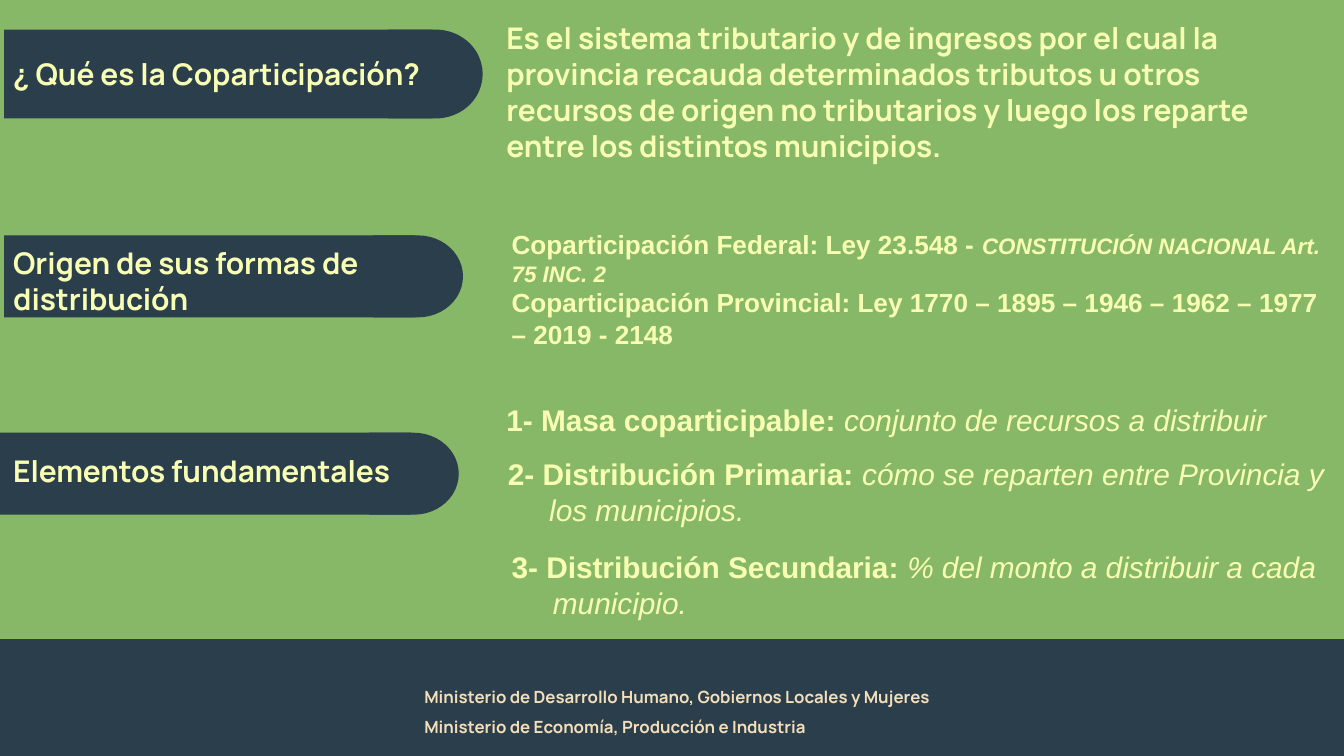
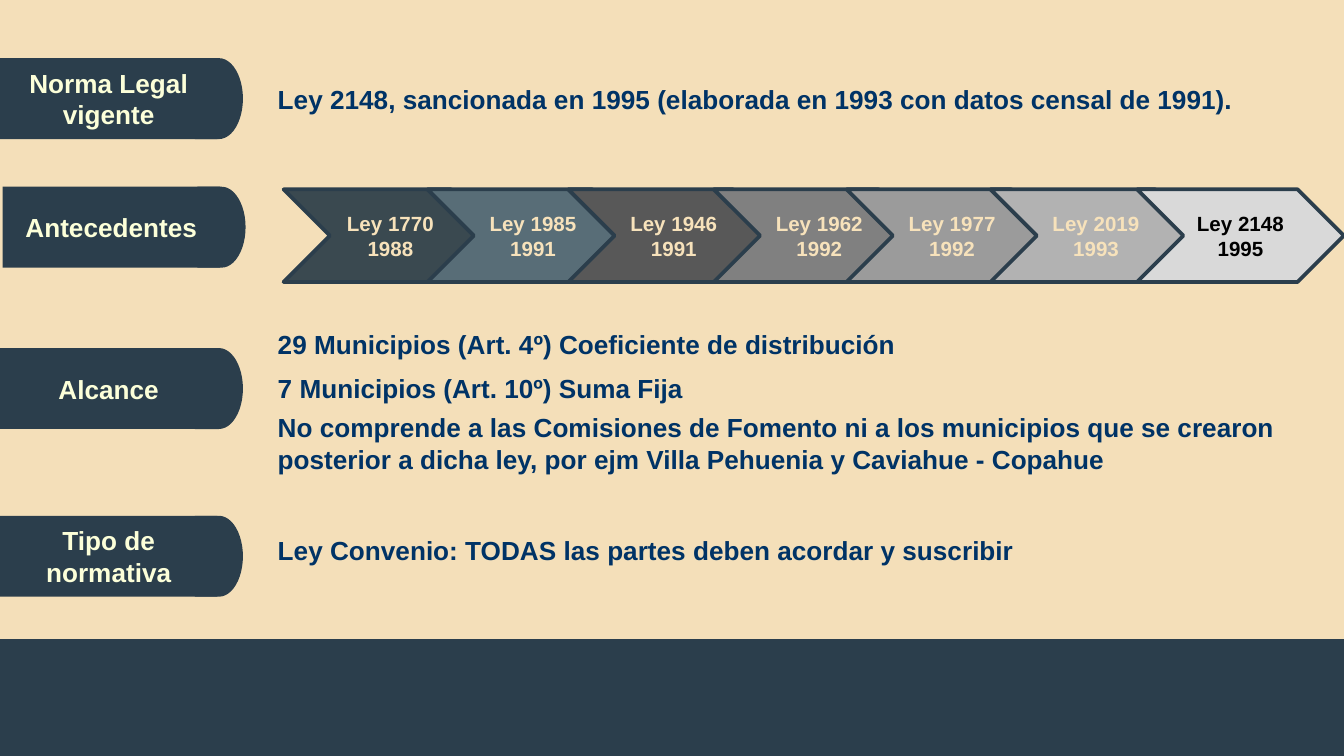
from pptx import Presentation
from pptx.dml.color import RGBColor
from pptx.enum.shapes import MSO_SHAPE as Preset
from pptx.enum.text import MSO_ANCHOR as Anchor, PP_ALIGN as Align
from pptx.util import Cm, Pt

COLORS = {
    "green": "87B867",
    "sand": "F4DFB9",
    "navy": "2B3E4C",
    "lemon": "F8FFB3",
    "ivory": "FCFFD9",
    "blue": "003366",
    "cream": "F7E2BB",
    "black": "000000",
}
SLIDE_WIDTH, SLIDE_HEIGHT = 25.4, 14.29
BAND_TOP = 12.09
CAP_OVERLAP = 0.47  # share of the rounded cap that lies over its bar
HANGING = 0.78
WIDE_INSETS = (0.25, 0.25)
SLIM_INSETS = (0.25, 0.13)

# Laws in order: left, width, fill, text colour, name, year
LAWS = [
    (5.36, 4.04, "3A4950", "cream", "Ley 1770", "1988"),
    (8.08, 3.99, "586D77", "cream", "Ley 1985", "1991"),
    (10.74, 3.99, "585858", "cream", "Ley 1946", "1991"),
    (13.49, 3.99, "808080", "cream", "Ley 1962", "1992"),
    (16.0, 3.99, "9B9B9B", "cream", "Ley 1977", "1992"),
    (18.72, 3.99, "B2B2B2", "cream", "Ley 2019", "1993"),
    (21.49, 3.91, "D9D9D9", "black", "Ley 2148", "1995"),
]


def rgb(name):
    return RGBColor.from_string(COLORS.get(name, name))


def style_font(font, size, color, name="Arial", bold=True, italic=False):
    font.size, font.name, font.bold, font.italic = Pt(size), name, bold, italic
    font.color.rgb = rgb(color)


def set_insets(text_frame, insets):
    side, end = (Cm(inset) for inset in insets)
    text_frame.margin_left = text_frame.margin_right = side
    text_frame.margin_top = text_frame.margin_bottom = end
    text_frame.word_wrap = True


def add_shape(shapes, preset, box, fill, line_width=None):
    shape = shapes.add_shape(preset, *map(Cm, box))
    shape.shadow.inherit = False
    shape.fill.solid()
    shape.fill.fore_color.rgb = rgb(fill)
    if line_width:
        shape.line.color.rgb = rgb("navy")
        shape.line.width = Pt(line_width)
    else:
        shape.line.fill.background()
    return shape


def fill_shape_text(shape, text, size, color, insets):
    text_frame = shape.text_frame
    text_frame.text = text
    text_frame.vertical_anchor = Anchor.MIDDLE
    set_insets(text_frame, insets)
    for paragraph in text_frame.paragraphs:
        paragraph.alignment = Align.CENTER
        style_font(paragraph.runs[0].font, size, color)


def add_text(slide, box, text, size, color, font="Arial", insets=SLIM_INSETS):
    text_frame = slide.shapes.add_textbox(*map(Cm, box)).text_frame
    text_frame.text = text
    set_insets(text_frame, insets)
    for paragraph in text_frame.paragraphs:
        style_font(paragraph.runs[0].font, size, color, font)
    return text_frame


def add_italic_run(paragraph, text, size, bold):
    run = paragraph.add_run()
    run.text = text
    style_font(run.font, size, "lemon", bold=bold, italic=True)


def add_pill(slide, box, cap_width):
    """Bar with a rounded right end; returns the bar."""
    left, top, width, height = box
    shapes = slide.shapes.add_group_shape().shapes
    bar = add_shape(shapes, Preset.RECTANGLE, box, "navy")
    cap_left = left + width - CAP_OVERLAP * cap_width
    add_shape(shapes, Preset.FLOWCHART_DELAY, (cap_left, top, cap_width, height), "navy")
    return bar


def new_slide(presentation, background):
    slide = presentation.slides.add_slide(presentation.slide_layouts[6])
    slide.background.fill.solid()
    slide.background.fill.fore_color.rgb = rgb(background)
    band = (0, BAND_TOP, SLIDE_WIDTH, SLIDE_HEIGHT - BAND_TOP)
    add_shape(slide.shapes, Preset.RECTANGLE, band, "navy", 0.75)
    return slide


def add_topic(slide, box, cap_width, title, title_shift):
    add_pill(slide, box, cap_width)
    title_box = (0, box[1] + title_shift, 9.07, box[3])
    add_text(slide, title_box, title, 16, "lemon", "Manrope", WIDE_INSETS)


def add_definition(slide, left, top):
    add_text(
        slide, (left, top, SLIDE_WIDTH - left, 3.51),
        "Es el sistema tributario y de ingresos por el cual la provincia recauda "
        "determinados tributos u otros recursos de origen no tributarios y luego "
        "los reparte entre los distintos municipios.",
        16, "lemon", "Manrope", WIDE_INSETS)


def add_origins(slide, left, top):
    text_frame = add_text(
        slide, (left, top, SLIDE_WIDTH - left, 2.57),
        "Coparticipación Federal: Ley 23.548 - \n"
        "Coparticipación Provincial: Ley 1770 – 1895 – 1946 – 1962 – 1977 – 2019 - 2148",
        14, "lemon")
    add_italic_run(text_frame.paragraphs[0], "CONSTITUCIÓN NACIONAL Art. 75 INC. 2", 12, True)


def add_elements(slide, left, top):
    elements = [
        (0, 0, 0.94, "1- Masa coparticipable: ", "conjunto de recursos a distribuir"),
        (0.03, 1.01, 1.63, "2- Distribución Primaria: ",
         "cómo se reparten entre Provincia y los municipios."),
        (0.1, 2.77, 1.63, "3- Distribución Secundaria: ",
         "% del monto a distribuir a cada municipio."),
    ]
    for shift, drop, height, name, meaning in elements:
        box = (left + shift, top + drop, SLIDE_WIDTH - left - shift, height)
        paragraph = add_text(slide, box, name, 16, "lemon").paragraphs[0]
        properties = paragraph._p.get_or_add_pPr()
        properties.set("marL", str(int(Cm(HANGING))))
        properties.set("indent", str(-int(Cm(HANGING))))
        add_italic_run(paragraph, meaning, 16, False)


def add_ministries(slide, left, top):
    ministries = [
        "Ministerio de Desarrollo Humano, Gobiernos Locales y Mujeres",
        "Ministerio de Economía, Producción e Industria",
    ]
    for row, ministry in enumerate(ministries):
        box = (left, top + 0.56 * row, 11.9, 1.12)
        text_frame = add_text(slide, box, ministry, 9, "sand", "Manrope")
        text_frame.paragraphs[0].line_spacing = 0.9


def add_law_timeline(slide, top, height):
    shapes = slide.shapes.add_group_shape().shapes
    for left, width, fill, color, name, year in LAWS:
        chevron = add_shape(shapes, Preset.CHEVRON, (left, top, width, height), fill, 2)
        fill_shape_text(chevron, f"{name}\n{year}", 11, color, SLIM_INSETS)


def build_concepts(presentation):
    slide = new_slide(presentation, "green")
    # Topics on the left
    add_topic(slide, (0.08, 0.56, 8.1, 1.68), 1.78, "¿ Qué es la Coparticipación?", 0.25)
    add_topic(slide, (0.08, 4.45, 7.77, 1.55), 1.7, "Origen de sus formas de distribución", -0.08)
    add_topic(slide, (0, 8.18, 7.77, 1.55), 1.7, "Elementos fundamentales", 0.13)
    # Explanations on the right
    add_definition(slide, 9.32, 0.13)
    add_origins(slide, 9.42, 4.19)
    add_elements(slide, 9.32, 7.47)
    # Footer
    add_ministries(slide, 7.77, 12.9)


def build_legal_framework(presentation):
    slide = new_slide(presentation, "sand")
    # Labels on the left
    labels = [
        (0, 1.1, "Norma Legal vigente"),
        (0.05, 3.53, "Antecedentes"),
        (0, 6.58, "Alcance"),
        (0, 9.75, "Tipo de normativa"),
    ]
    for left, top, label in labels:
        bar = add_pill(slide, (left, top, 4.11, 1.53), 0.91)
        fill_shape_text(bar, label, 14, "ivory", WIDE_INSETS)
    # Statements on the right
    statements = [
        (1.45, 0.86, "Ley 2148, sancionada en 1995 (elaborada en 1993 con datos censal de 1991)."),
        (6.07, 0.86, "29 Municipios (Art. 4º) Coeficiente de distribución"),
        (6.91, 0.86, "7 Municipios (Art. 10º) Suma Fija"),
        (7.65, 1.45, "No comprende a las Comisiones de Fomento ni a los municipios que se crearon "
                     "posterior a dicha ley, por ejm Villa Pehuenia y Caviahue - Copahue"),
        (9.98, 0.86, "Ley Convenio: TODAS las partes deben acordar y suscribir"),
    ]
    for top, height, statement in statements:
        add_text(slide, (5, top, 20.1, height), statement, 14, "blue")
    add_law_timeline(slide, 3.58, 1.75)


def main():
    presentation = Presentation()
    presentation.slide_width = Cm(SLIDE_WIDTH)
    presentation.slide_height = Cm(SLIDE_HEIGHT)
    build_concepts(presentation)
    build_legal_framework(presentation)
    presentation.save("out.pptx")


if __name__ == "__main__":
    main()
